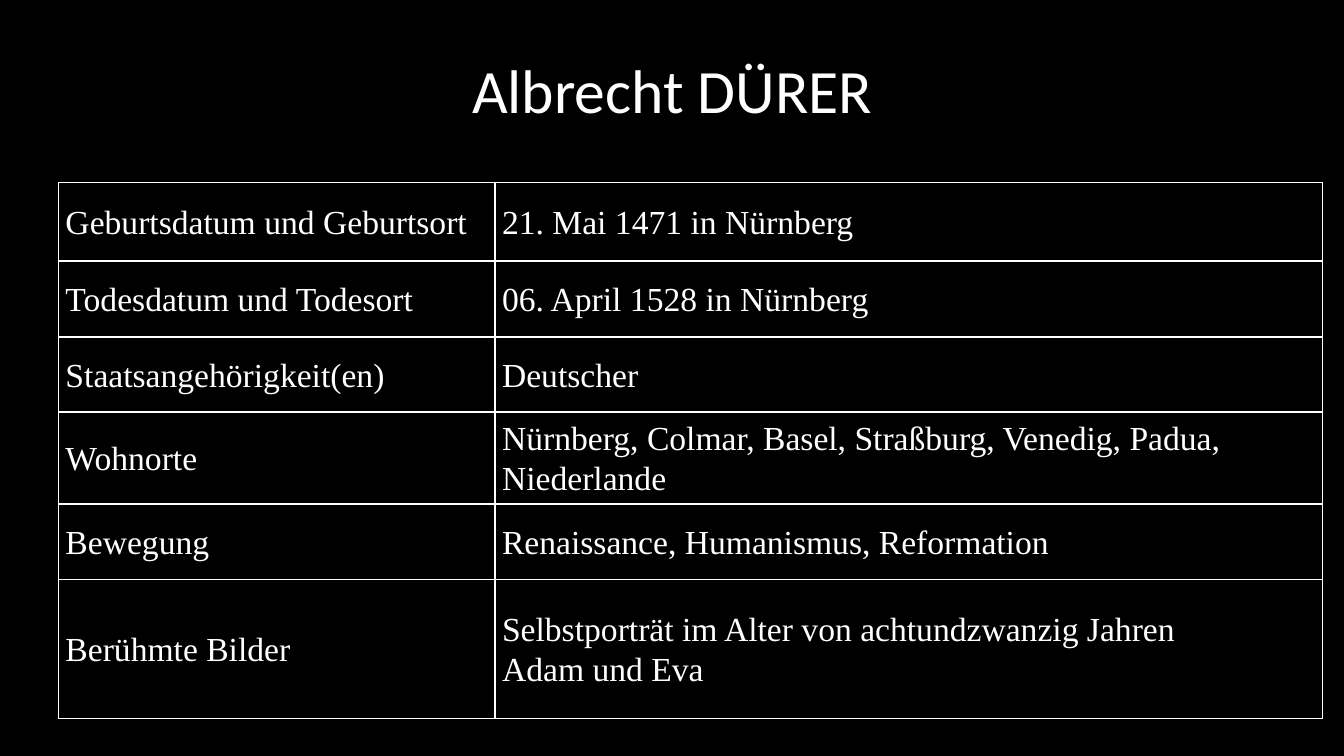
"""Build a slide with a short profile of Albrecht Dürer as a table."""
from dataclasses import dataclass

from lxml.etree import SubElement
from pptx import Presentation
from pptx.dml.color import RGBColor
from pptx.enum.text import MSO_ANCHOR, PP_ALIGN
from pptx.oxml.ns import qn
from pptx.slide import Slide
from pptx.table import _Cell
from pptx.text.text import TextFrame
from pptx.util import Inches, Pt


@dataclass(frozen=True)
class Theme:
    background: RGBColor = RGBColor(0x00, 0x00, 0x00)
    foreground: RGBColor = RGBColor(0xFF, 0xFF, 0xFF)
    title_font: str = "Calibri"
    title_size: int = 44
    title_spacing: float = 0.9
    body_font: str = "Times New Roman"
    body_size: int = 24
    body_spacing: float = 1.07
    thin_line: float = 1
    thick_line: float = 1.5


@dataclass(frozen=True)
class Fact:
    label: str
    value: str
    height: float


THEME = Theme()
COLUMN_WIDTHS = (4.33, 8.21)
FACTS = (
    Fact("Geburtsdatum und Geburtsort", "21. Mai 1471 in Nürnberg", 0.78),
    Fact("Todesdatum und Todesort", "06. April 1528 in Nürnberg", 0.75),
    Fact("Staatsangehörigkeit(en)", "Deutscher", 0.75),
    Fact("Wohnorte", "Nürnberg, Colmar, Basel, Straßburg, Venedig, Padua, Niederlande", 0.91),
    Fact("Bewegung", "Renaissance, Humanismus, Reformation", 0.75),
    Fact("Berühmte Bilder", "Selbstporträt im Alter von achtundzwanzig Jahren\nAdam und Eva", 1.38),
)


def format_text(text_frame: TextFrame, font: str, size: int, spacing: float, alignment: PP_ALIGN) -> None:
    for paragraph in text_frame.paragraphs:
        paragraph.alignment = alignment
        paragraph.line_spacing = spacing
        for run in paragraph.runs:
            run.font.name = font
            run.font.size = Pt(size)
            run.font.color.rgb = THEME.foreground


def add_borders(cell: _Cell, top: float, bottom: float) -> None:
    properties = cell._tc.get_or_add_tcPr()
    widths = {"a:lnL": THEME.thin_line, "a:lnR": THEME.thin_line, "a:lnT": top, "a:lnB": bottom}
    for tag, width in widths.items():
        line = SubElement(properties, qn(tag), w=str(Pt(width)))
        fill = SubElement(line, qn("a:solidFill"))
        SubElement(fill, qn("a:srgbClr"), val=str(THEME.foreground))


def format_cell(cell: _Cell, text: str, top: float, bottom: float) -> None:
    cell.text_frame.text = text
    format_text(cell.text_frame, THEME.body_font, THEME.body_size, THEME.body_spacing, PP_ALIGN.LEFT)
    cell.vertical_anchor = MSO_ANCHOR.MIDDLE
    cell.margin_left = cell.margin_right = Inches(0.07)
    cell.margin_top = cell.margin_bottom = 0
    add_borders(cell, top, bottom)
    cell.fill.solid()
    cell.fill.fore_color.rgb = THEME.background


def add_title(slide: Slide, text: str) -> None:
    title = slide.shapes.title
    title.left, title.top = Inches(0.92), Inches(0.4)
    title.width, title.height = Inches(11.5), Inches(1.06)
    title.text_frame.text = text
    title.text_frame.vertical_anchor = MSO_ANCHOR.MIDDLE
    format_text(title.text_frame, THEME.title_font, THEME.title_size, THEME.title_spacing, PP_ALIGN.CENTER)


def add_fact_table(slide: Slide, facts: tuple[Fact, ...]) -> None:
    width = Inches(sum(COLUMN_WIDTHS))
    height = Inches(sum(fact.height for fact in facts))
    table = slide.shapes.add_table(
        len(facts), len(COLUMN_WIDTHS), Inches(0.58), Inches(1.81), width, height
    ).table
    table.first_row = table.horz_banding = False
    for column, column_width in zip(table.columns, COLUMN_WIDTHS):
        column.width = Inches(column_width)
    for index, (row, fact) in enumerate(zip(table.rows, facts)):
        row.height = Inches(fact.height)
        top = THEME.thin_line if index == 0 else THEME.thick_line
        bottom = THEME.thin_line if index == len(facts) - 1 else THEME.thick_line
        for cell, text in zip(row.cells, (fact.label, fact.value)):
            format_cell(cell, text, top, bottom)


def main() -> None:
    presentation = Presentation()
    presentation.slide_width, presentation.slide_height = Inches(13.33), Inches(7.5)
    slide = presentation.slides.add_slide(presentation.slide_layouts.get_by_name("Title Only"))
    slide.background.fill.solid()
    slide.background.fill.fore_color.rgb = THEME.background
    add_title(slide, "Albrecht DÜRER")
    add_fact_table(slide, FACTS)
    presentation.save("out.pptx")


if __name__ == "__main__":
    main()
